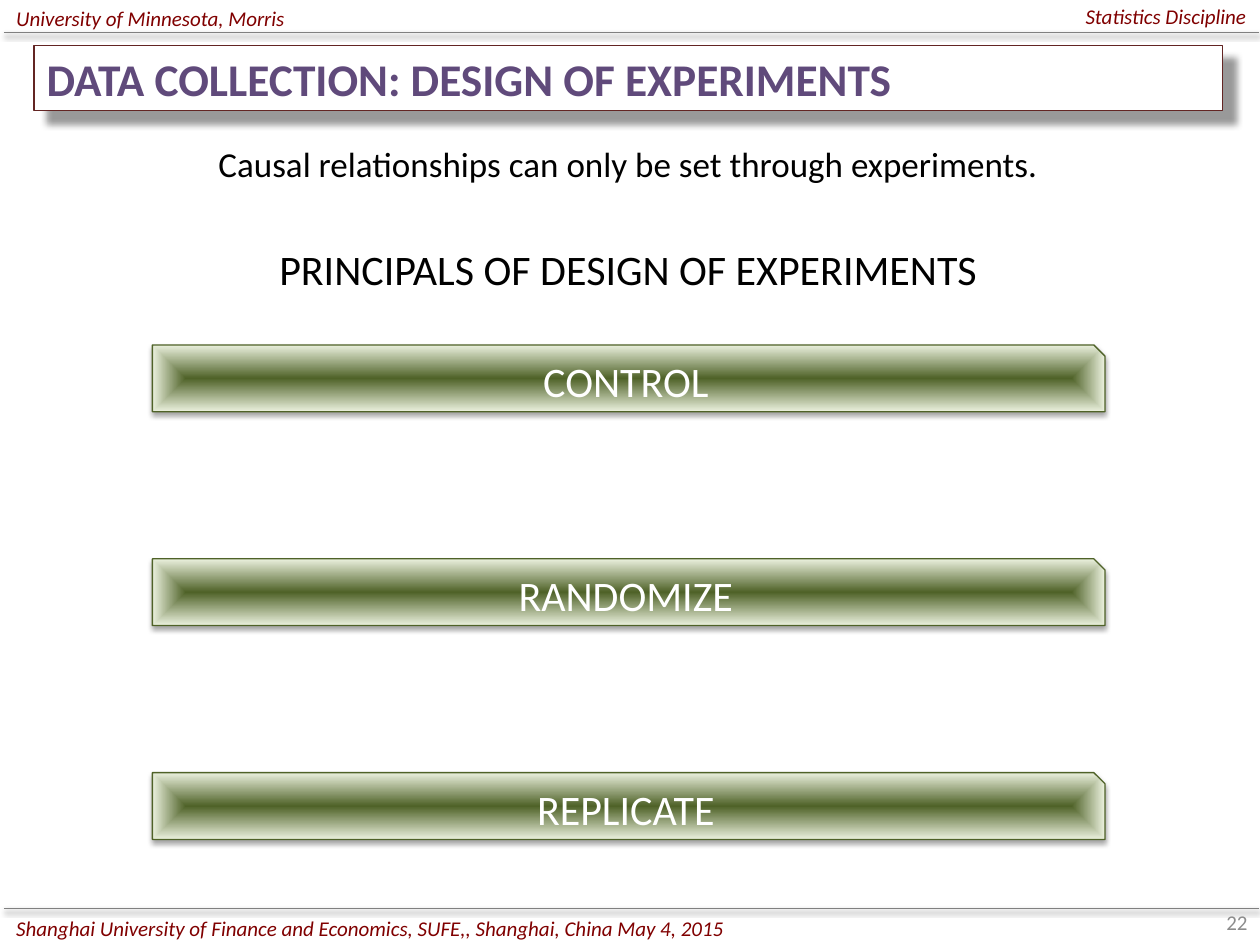
from lxml import etree
from pptx import Presentation
from pptx import util as u
from pptx.dml.color import RGBColor
from pptx.enum import shapes, text
from pptx.oxml import ns

THEME = {
    "font": "Calibri",
    "ink": "000000", "paper": "FFFFFF", "rule": "808080", "maroon": "800000",
    "title": "604A7B", "frame": "632523", "number": "8C8C8C",
    "dark": "4F6228", "light": "EBF1DE",
    "small": 12, "lead": 20, "head": 24, "top": 25.9, "thin": 0.75,
}
LEFT, MID, RIGHT = text.PP_ALIGN.LEFT, text.PP_ALIGN.CENTER, text.PP_ALIGN.RIGHT

deck = Presentation()
deck.slide_width, deck.slide_height = u.Inches(10), u.Inches(7.5)
# Grid of 100 columns by 100 rows
col, row = deck.slide_width / 100, deck.slide_height / 100
slide = deck.slides.add_slide(deck.slide_layouts[5])
items = slide.shapes


def write(shape, words, size, ink, align, bold=False, slant=False, middle=True):
    """Put one formatted run into the shape."""
    frame = shape.text_frame
    frame.word_wrap = True
    frame.auto_size = text.MSO_AUTO_SIZE.NONE
    frame.vertical_anchor = text.MSO_ANCHOR.MIDDLE if middle else text.MSO_ANCHOR.TOP
    para = frame.paragraphs[0]
    para.alignment = align
    run = para.add_run()
    run.text = words
    font = run.font
    font.name, font.size = THEME["font"], u.Pt(THEME[size])
    font.bold, font.italic = bold, slant
    font.color.rgb = RGBColor.from_string(THEME[ink])


def outline(shape, ink, alpha, blur, dist, angle):
    """Draw a thin line and an outer shadow (points, degrees, percent)."""
    shape.line.color.rgb = RGBColor.from_string(THEME[ink])
    shape.line.width = u.Pt(THEME["thin"])
    props = shape._element.spPr
    effects = etree.SubElement(props, ns.qn("a:effectLst"))
    cast = etree.SubElement(
        effects, ns.qn("a:outerShdw"), blurRad=str(u.Pt(blur)), dist=str(u.Pt(dist)),
        dir=str(angle * 60000), algn="ctr", rotWithShape="0")
    tint = etree.SubElement(cast, ns.qn("a:srgbClr"), val=THEME["ink"])
    etree.SubElement(tint, ns.qn("a:alpha"), val=str(alpha * 1000))


# Title
title = items.title
title.left, title.top = int(2.7 * col), int(4.8 * row)
title.width, title.height = int(94.3 * col), int(6.93 * row)
title.fill.solid()
title.fill.fore_color.rgb = RGBColor.from_string(THEME["paper"])
outline(title, "frame", 40, 4, 10, 45)
write(title, "DATA COLLECTION: DESIGN OF EXPERIMENTS", "top", "title", LEFT, bold=True)

# Header and footer rules
for y in (3.47, 96.13):
    rule = items.add_connector(
        shapes.MSO_CONNECTOR.STRAIGHT,
        int(0.3 * col), int(y * row), int(99.9 * col), int(y * row))
    outline(rule, "rule", 38, 3.1, 1.6, 90)

# Header, footer, page number and centred statements
labels = [
    (0.3, -0.8, 45.8, 5.33, "University of Minnesota, Morris", "small", "maroon", LEFT),
    (54.1, -0.93, 45.8, 5.33, "Statistics Discipline", "small", "maroon", RIGHT),
    (0.3, 96.13, 58.2, 4.13,
     "Shanghai University of Finance and Economics, SUFE,, Shanghai, China May 4, 2015",
     "small", "maroon", LEFT),
    (76.7, 94.93, 23.3, 5.33, "22", "small", "number", RIGHT),
    (2.7, 14.4, 94.3, 5.87,
     "Causal relationships can only be set through experiments.", "lead", "ink", MID),
    (2.7, 25.07, 94.3, 6.67, "PRINCIPALS OF DESIGN OF EXPERIMENTS", "head", "ink", MID),
]
for x, y, w, h, words, size, ink, align in labels:
    box = items.add_textbox(int(x * col), int(y * row), int(w * col), int(h * row))
    write(box, words, size, ink, align, slant=ink == "maroon", middle=size == "small")

# Principle bars, evenly spaced
for i, words in enumerate(("CONTROL", "RANDOMIZE", "REPLICATE")):
    bar = items.add_shape(
        shapes.MSO_SHAPE.SNIP_1_RECTANGLE,
        int(12.1 * col), int((36.5 + 22.63 * i) * row), int(75.6 * col), int(7.07 * row))
    bar.fill.gradient()
    for stop, ink in zip(bar.fill.gradient_stops, ("dark", "light")):
        stop.color.rgb = RGBColor.from_string(THEME[ink])
    grad = bar._element.spPr.find(ns.qn("a:gradFill"))
    grad.remove(grad.find(ns.qn("a:lin")))
    inward = etree.SubElement(grad, ns.qn("a:path"), path="shape")
    etree.SubElement(inward, ns.qn("a:fillToRect"), l="50000", t="50000", r="50000", b="50000")
    outline(bar, "dark", 35, 3.1, 1.8, 90)
    write(bar, words, "head", "paper", MID)

deck.save("out.pptx")
